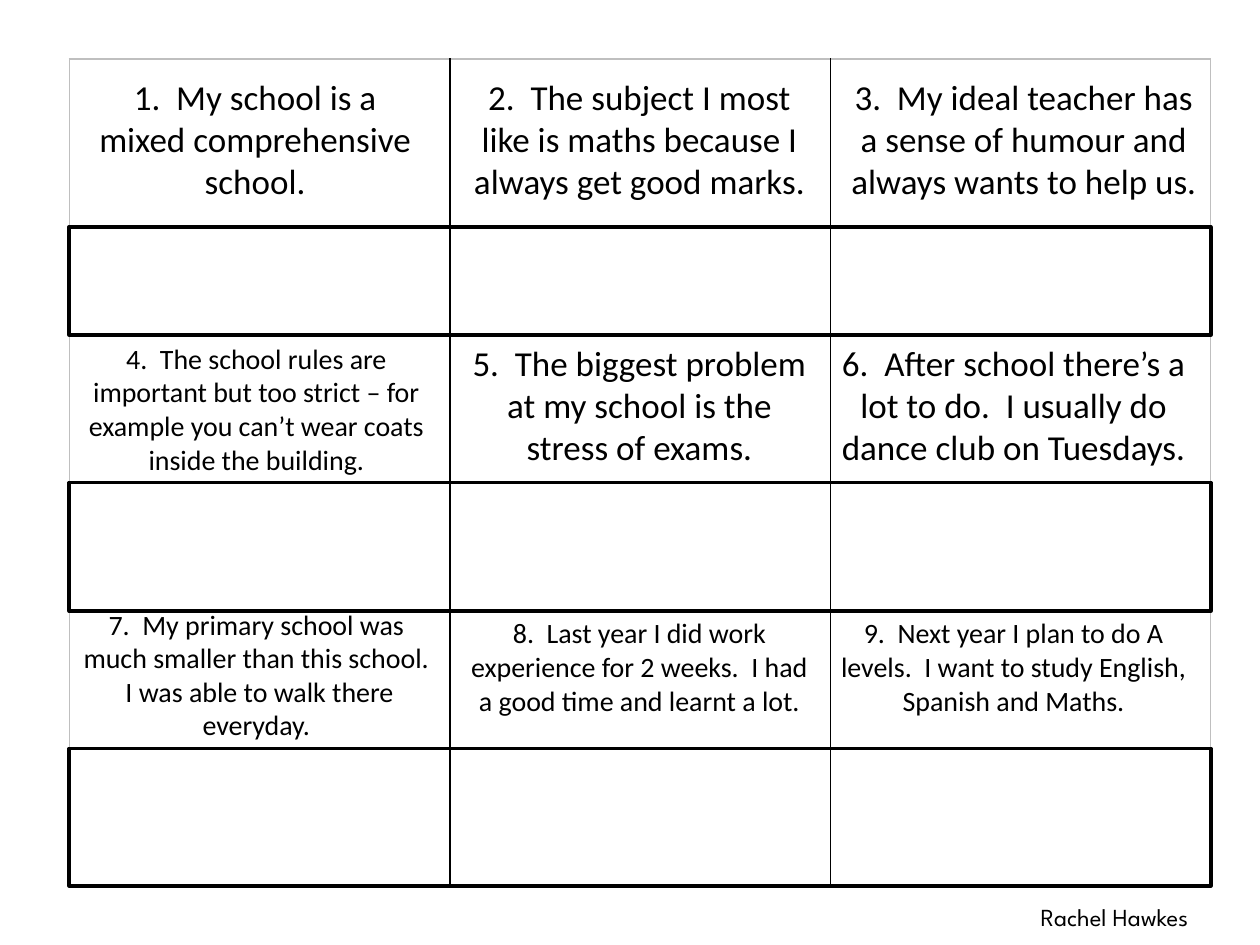
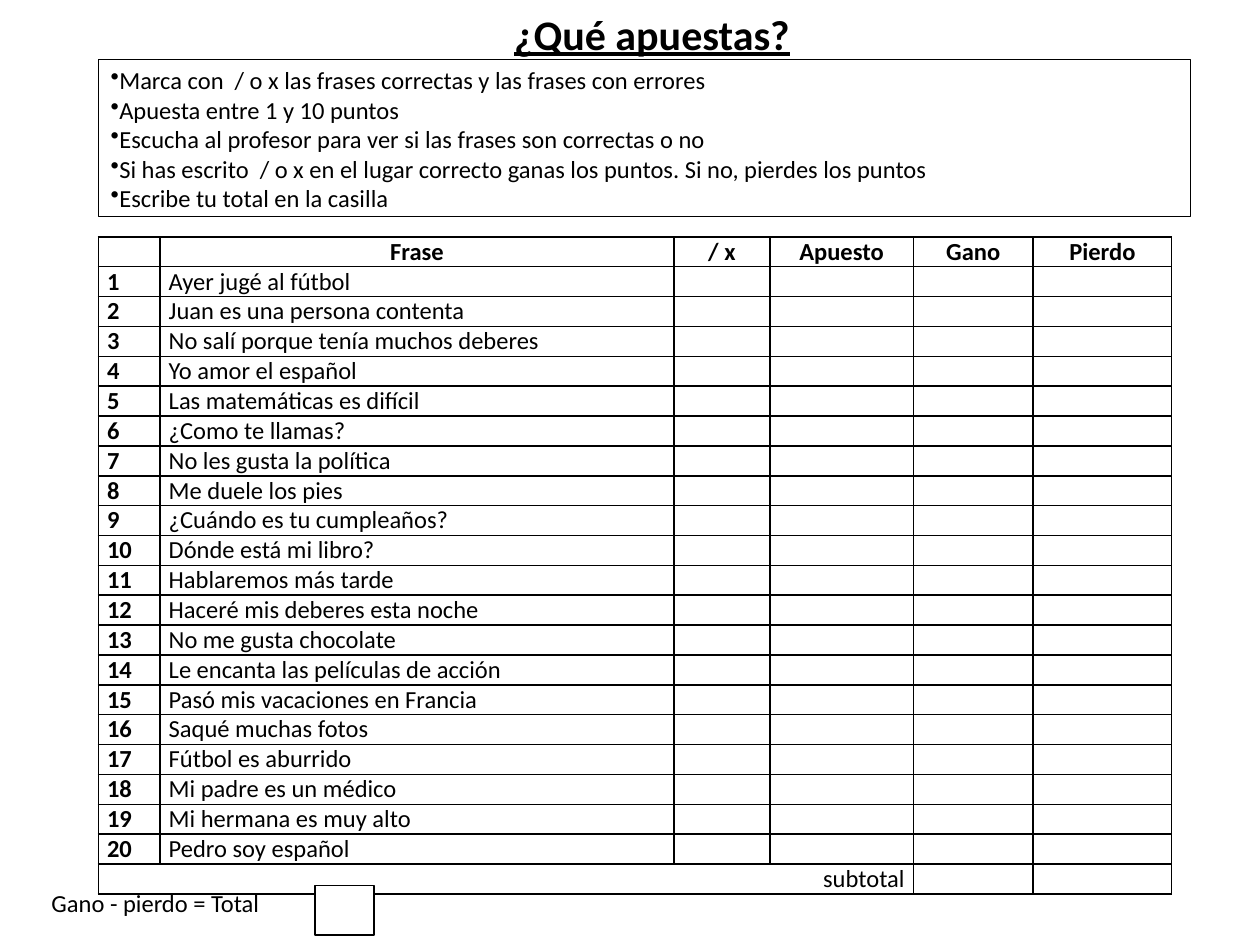
from lxml.etree import SubElement
from pptx import Presentation
from pptx.dml.color import RGBColor
from pptx.enum.shapes import MSO_SHAPE
from pptx.enum.text import MSO_ANCHOR, MSO_AUTO_SIZE, PP_ALIGN
from pptx.oxml import parse_xml
from pptx.oxml.ns import nsdecls, qn
from pptx.util import Pt

BLACK, WHITE, GREY = "000000", "FFFFFF", "BFBFBF"
TITLE_ONLY, BLANK = 5, 6

GRID_LEFT, GRID_TOP = 39.6, 33.84
GRID_COLUMN, GRID_ROW = 217.44, 157.5
ANSWER_BANDS = [(129.6, 61.92), (275.76, 73.44), (427.68, 78.48)]
SENTENCES = [
    (44.64, 39.6, 202.32, 20, "1.  My school is a mixed comprehensive school."),
    (258.48, 39.6, 213.84, 20, "2.  The subject I most like is maths because I always get good marks."),
    (478.08, 39.6, 213.84, 20, "3.  My ideal teacher has a sense of humour and always wants to help us."),
    (39.6, 191.52, 213.84, 16, "4.  The school rules are important but too strict – for example you can’t wear coats inside the building."),
    (258.48, 191.52, 213.84, 20, "5.  The biggest problem at my school is the stress of exams."),
    (472.32, 191.52, 213.84, 20, "6.  After school there’s a lot to do.  I usually do dance club on Tuesdays."),
    (39.6, 343.44, 213.84, 16, "7.  My primary school was much smaller than this school.  I was able to walk there everyday."),
    (258.48, 348.48, 213.84, 16, "8.  Last year I did work experience for 2 weeks.  I had a good time and learnt a lot."),
    (472.32, 348.48, 213.84, 16, "9.  Next year I plan to do A levels.  I want to study English, Spanish and Maths."),
]

INSTRUCTIONS = [
    "Marca con  / o x las frases correctas y las frases con errores",
    "Apuesta entre 1 y 10 puntos",
    "Escucha al profesor para ver si las frases son correctas o no",
    "Si has escrito  / o x en el lugar correcto ganas los puntos. Si no, pierdes los puntos",
    "Escribe tu total en la casilla",
]
BET_HEADINGS = ["", "Frase", "/ x", "Apuesto", "Gano", "Pierdo"]
BET_COLUMNS = [35.28, 293.76, 54.72, 82.08, 68.4, 79.2]
BET_ROW = 16.79
PHRASES = [
    "Ayer jugé al fútbol",
    "Juan es una persona contenta",
    "No salí porque tenía muchos deberes",
    "Yo amor el español",
    "Las matemáticas es difícil",
    "¿Como te llamas?",
    "No les gusta la política",
    "Me duele los pies",
    "¿Cuándo es tu cumpleaños?",
    "Dónde está mi libro?",
    "Hablaremos más tarde",
    "Haceré mis deberes esta noche",
    "No me gusta chocolate",
    "Le encanta las películas de acción",
    "Pasó mis vacaciones en Francia",
    "Saqué muchas fotos",
    "Fútbol es aburrido",
    "Mi padre es un médico",
    "Mi hermana es muy alto",
    "Pedro soy español",
]


def color(value):
    return RGBColor.from_string(value)


class Worksheet:
    """Hold the worksheet style and the current slide, and draw its elements."""

    font = "Calibri"

    def __init__(self):
        self.presentation = Presentation()
        self.presentation.slide_width = Pt(720)
        self.presentation.slide_height = Pt(540)
        self.slide = None

    def add_slide(self, layout):
        self.slide = self.presentation.slides.add_slide(self.presentation.slide_layouts[layout])

    def fill_text(self, text_frame, text, size, align=PP_ALIGN.LEFT, bold=False, font=None):
        text_frame.text = text
        for paragraph in text_frame.paragraphs:
            paragraph.alignment = align
            for run in paragraph.runs:
                run.font.name = font or self.font
                run.font.size = Pt(size)
                run.font.bold = bold
                run.font.color.rgb = color(BLACK)
            if not paragraph.runs:
                SubElement(paragraph._p, qn("a:endParaRPr"), sz=str(size * 100))

    def title(self, text, left, top, width, height):
        title = self.slide.shapes.title
        title.left, title.top, title.width, title.height = map(Pt, (left, top, width, height))
        frame = title.text_frame
        self.fill_text(frame, text, 24, bold=True)
        frame.paragraphs[0].runs[0].font.underline = True
        frame.vertical_anchor = MSO_ANCHOR.MIDDLE
        frame.auto_size = MSO_AUTO_SIZE.NONE
        frame.word_wrap = False

    def text(self, text, left, top, width, height, size, wrap=True, **style):
        box = self.slide.shapes.add_textbox(Pt(left), Pt(top), Pt(width), Pt(height))
        box.text_frame.word_wrap = wrap
        box.text_frame.auto_size = MSO_AUTO_SIZE.SHAPE_TO_FIT_TEXT
        self.fill_text(box.text_frame, text, size, **style)

    def rectangle(self, left, top, width, height, line_width, fill=None):
        shape = self.slide.shapes.add_shape(
            MSO_SHAPE.RECTANGLE, Pt(left), Pt(top), Pt(width), Pt(height))
        shape.shadow.inherit = False
        shape.line.color.rgb = color(BLACK)
        shape.line.width = Pt(line_width)
        if fill:
            shape.fill.solid()
            shape.fill.fore_color.rgb = color(fill)
        else:
            shape.fill.background()
        return shape

    def bullet_box(self, lines, left, top, width, height):
        frame = self.rectangle(left, top, width, height, 0.75, WHITE).text_frame
        frame.vertical_anchor = MSO_ANCHOR.TOP
        self.fill_text(frame, "\n".join(lines), 14)
        for paragraph in frame.paragraphs:
            SubElement(paragraph._p.get_or_add_pPr(), qn("a:buChar"), char="•")

    def table(self, left, top, columns, rows, outline=BLACK):
        table = self.slide.shapes.add_table(
            len(rows), len(columns), Pt(left), Pt(top), Pt(sum(columns)), Pt(sum(rows))).table
        table.first_row = table.horz_banding = False
        for column, width in zip(table.columns, columns):
            column.width = Pt(width)
        for row, height in zip(table.rows, rows):
            row.height = Pt(height)
        last_row, last_column = len(rows) - 1, len(columns) - 1
        for r, row in enumerate(table.rows):
            for c, cell in enumerate(row.cells):
                cell.fill.background()
                on_edge = {"lnL": c == 0, "lnR": c == last_column,
                           "lnT": r == 0, "lnB": r == last_row}
                self.borders(cell, {side: outline if edge else BLACK for side, edge in on_edge.items()})
        return table

    def borders(self, cell, sides):
        properties = cell._tc.get_or_add_tcPr()
        for position, (side, value) in enumerate(sides.items()):
            properties.insert(position, parse_xml(
                f'<a:{side} {nsdecls("a")} w="{Pt(1)}"><a:solidFill>'
                f'<a:srgbClr val="{value}"/></a:solidFill></a:{side}>'))

    def cell(self, cell, text, **style):
        cell.margin_left = cell.margin_right = Pt(5)
        cell.margin_top = cell.margin_bottom = 0
        self.fill_text(cell.text_frame, text, 14, **style)


def sentence_slide(sheet):
    sheet.add_slide(BLANK)
    sheet.table(GRID_LEFT, GRID_TOP, [GRID_COLUMN] * 3, [GRID_ROW] * 3, outline=GREY)
    for top, height in ANSWER_BANDS:
        sheet.rectangle(GRID_LEFT, top, 3 * GRID_COLUMN, height, 2)
    for left, top, width, size, sentence in SENTENCES:
        sheet.text(sentence, left, top, width, 80, size, align=PP_ALIGN.CENTER)
    sheet.text("Rachel Hawkes", 517.68, 511.92, 168.48, 24.48, 14,
               align=PP_ALIGN.RIGHT, font="League Spartan")


def betting_slide(sheet):
    sheet.add_slide(TITLE_ONLY)
    sheet.title("¿Qué apuestas?", 286.56, 0, 174.24, 38)
    sheet.bullet_box(INSTRUCTIONS, 56.16, 33.84, 624.24, 90)

    blanks = [""] * 4
    rows = [BET_HEADINGS]
    rows += [[str(number), phrase, *blanks] for number, phrase in enumerate(PHRASES, 1)]
    rows.append(["subtotal", "", *blanks])
    table = sheet.table(56.16, 135.36, BET_COLUMNS, [BET_ROW] * len(rows))
    last = len(rows) - 1
    for r, row in enumerate(rows):
        for c, text in enumerate(row):
            align = {0: PP_ALIGN.CENTER, last: PP_ALIGN.RIGHT}.get(r, PP_ALIGN.LEFT)
            bold = r == 0 or (c == 0 and r < last)
            sheet.cell(table.cell(r, c), text, align=align, bold=bold)
    table.cell(last, 0).merge(table.cell(last, 3))

    sheet.text("Gano - pierdo = Total", 22.32, 504, 137.52, 24.48, 14, wrap=False)
    sheet.rectangle(180, 506.16, 33.84, 28.08, 0.75, WHITE)


def main():
    sheet = Worksheet()
    sentence_slide(sheet)
    betting_slide(sheet)
    sheet.presentation.save("out.pptx")


if __name__ == "__main__":
    main()
